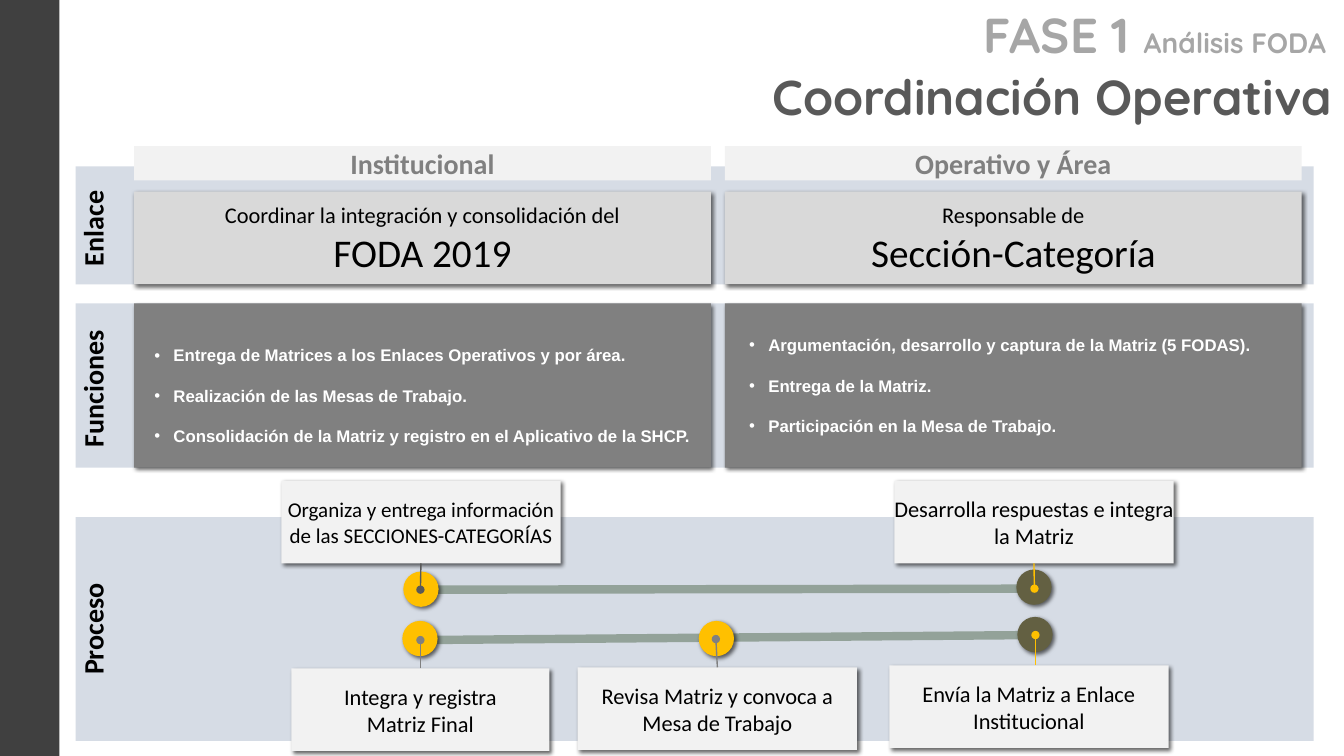
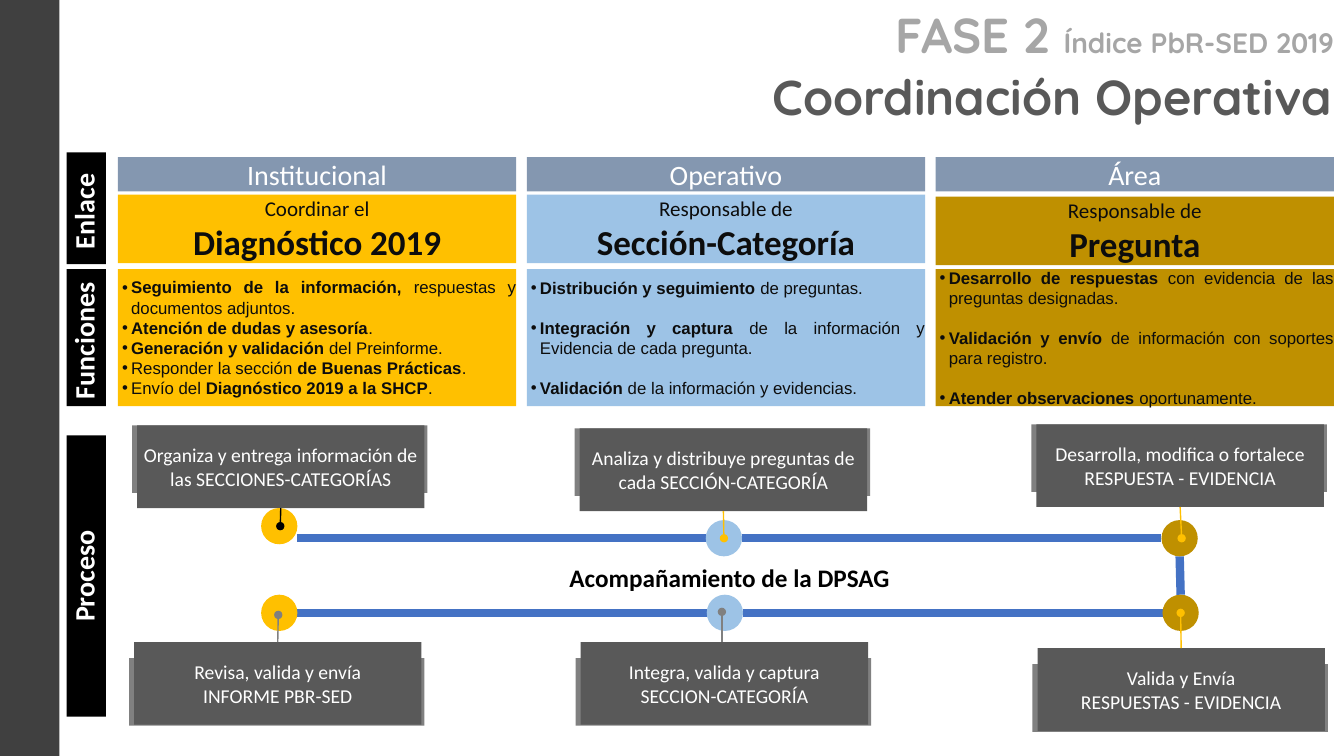
import pptx
import pptx.util
import pptx.dml.color
import pptx.enum.shapes
import pptx.enum.text
import pptx.oxml.ns
from lxml import etree

Inches, Pt = pptx.util.Inches, pptx.util.Pt
qn = pptx.oxml.ns.qn
Align = pptx.enum.text.PP_ALIGN
Anchor = pptx.enum.text.MSO_ANCHOR
Kind = pptx.enum.shapes.MSO_SHAPE

BLACK, WHITE, INK = "000000", "FFFFFF", "0D0D0D"
GOLD, OLIVE, OCHRE, SKY = "FFC000", "636042", "BF9000", "9DC3E6"
DARK, GREY, PALE, BAND = "595959", "808080", "F2F2F2", "D6DCE5"
SAGE, BLUE = "93A299", "4472C4"
TITLE = "Coordinación Operativa"

# Slide 1: columns, side bands (text, top, height), process
COLS1 = [
    dict(left=1.33, head="Institucional",
         role=["Coordinar la integración y consolidación del", "FODA 2019"],
         tasks=["*Entrega de Matrices a los Enlaces Operativos y por área.*",
                "*Realización de las Mesas de Trabajo.*",
                "*Consolidación de la Matriz y registro en el Aplicativo de la SHCP.*"],
         ins=(0, 0, 0, 0)),
    dict(left=7.19, head="Operativo y Área",
         role=["Responsable de", "Sección-Categoría"],
         tasks=["*Argumentación, desarrollo y captura de la Matriz (5 FODAS).*",
                "*Entrega de la Matriz.*",
                "*Participación en la Mesa de Trabajo.*"],
         ins=(0.04, 0, 0, 0.2)),
]
BANDS1 = [("Enlace ", 1.65, 1.17), ("Funciones ", 3.01, 1.63), ("Proceso", 5.13, 2.22)]
LINKS1 = [(4.23, 5.85, 10.27, 5.84), (4.14, 6.35, 10.27, 6.3)]
DOTS1 = [(4, 5.67, GOLD), (10.08, 5.65, OLIVE), (3.99, 6.16, GOLD),
         (6.93, 6.16, GOLD), (10.09, 6.12, OLIVE)]
# Cards: left, top, width, paragraphs, text size, pin colour, pin end
CARDS1 = [
    (2.79, 4.77, 2.77, ["Organiza y entrega información de las SECCIONES-CATEGORÍAS"],
     15, DARK, (4.17, 5.85)),
    (8.87, 4.77, 2.77, ["Desarrolla respuestas e integra la Matriz"], 16, GOLD, (10.26, 5.84)),
    (8.82, 6.6, 2.77, ["Envía la Matriz a Enlace Institucional"], 16, GOLD, (10.27, 6.3)),
    (5.73, 6.62, 2.77, ["Revisa Matriz y convoca a Mesa de Trabajo"], 16, GREY, (7.1, 6.34)),
    (2.89, 6.63, 2.56, ["Integra y registra", "Matriz Final"], 16, GREY, (4.17, 6.35)),
]

# Slide 2: the same parts
COLS2 = [
    dict(head="Institucional", fill=GOLD, top=1.93, gap=0,
         role=["Coordinar el", "Diagnóstico 2019"],
         tasks=["*Seguimiento de la información, *respuestas y documentos adjuntos.",
                "*Atención de dudas y asesoría*.",
                "*Generación y validación *del Preinforme.",
                "Responder la sección *de Buenas Prácticas*.",
                "Envío del *Diagnóstico 2019 a la SHCP*."]),
    dict(head="Operativo", fill=SKY, top=1.93, gap=14,
         role=["Responsable de", "Sección-Categoría"],
         tasks=["*Distribución y seguimiento *de preguntas.",
                "*Integración y captura *de la información y Evidencia de cada pregunta.",
                "*Validación* de la información y evidencias."]),
    dict(head="Área", fill=OCHRE, top=1.95, gap=14,
         role=["Responsable de", "Pregunta"],
         tasks=["*Desarrollo de respuestas *con evidencia de las preguntas designadas.",
                "*Validación y envío *de información con soportes para registro.",
                "*Atender observaciones *oportunamente."]),
]
BANDS2 = [("Enlace ", 1.51, 1.11), ("Funciones ", 2.67, 1.36), ("Proceso", 4.32, 2.79)]
LINKS2 = [(2.95, 5.34, 7, 5.34), (7.36, 5.34, 11.52, 5.34), (11.71, 5.9, 11.7, 5.52),
          (7.37, 6.08, 11.55, 6.08), (2.95, 6.08, 7.01, 6.08)]
DOTS2 = [(2.59, 5.04, GOLD), (7, 5.16, SKY), (11.52, 5.16, OCHRE),
         (2.59, 5.9, GOLD), (7.01, 5.9, SKY), (11.53, 5.9, OCHRE)]
CARDS2 = [
    (1.36, 4.22, 2.85, ["Organiza y entrega información de las SECCIONES-CATEGORÍAS"],
     14, BLACK, (2.78, 5.22)),
    (5.75, 4.25, 2.85, ["Analiza y distribuye preguntas de cada SECCIÓN-CATEGORÍA"],
     14, GOLD, (7.18, 5.34)),
    (10.28, 4.21, 2.85, ["Desarrolla, modifica o fortalece", "RESPUESTA - EVIDENCIA"],
     14, GOLD, (11.72, 5.34)),
    (1.33, 6.37, 2.85, ["Revisa, valida y envía", "INFORME PBR-SED"],
     14, GREY, (2.76, 6.1)),
    (5.76, 6.37, 2.85, ["Integra, valida y captura", "SECCION-CATEGORÍA"],
     14, GREY, (7.16, 6.07)),
    (10.29, 6.43, 2.85, ["Valida y Envía", "RESPUESTAS - EVIDENCIA"],
     14, GOLD, (11.71, 6.08)),
]
CARD_H = 0.82


def rgb(code):
    return pptx.dml.color.RGBColor.from_string(code)


def style(run, size, color, font="Calibri", bold=False):
    run.font.size, run.font.name, run.font.bold = Pt(size), font, bold
    run.font.color.rgb = rgb(color)


def frame(shape, anchor=Anchor.TOP, ins=None):
    box = shape.text_frame
    box.word_wrap, box.vertical_anchor = True, anchor
    if ins is not None:
        (box.margin_left, box.margin_top,
         box.margin_right, box.margin_bottom) = [Inches(n) for n in ins]
    return box


def shade(shape):
    """Soft shadow down and to the right."""
    effects = shape.element.spPr.find(qn("a:effectLst"))
    outer = etree.SubElement(effects, qn("a:outerShdw"), blurRad=str(Pt(3)),
                             dist=str(Pt(2)), dir="2700000", algn="tl", rotWithShape="0")
    tint = etree.SubElement(outer, qn("a:srgbClr"), val=BLACK)
    etree.SubElement(tint, qn("a:alpha"), val="60000")


def block(slide, x, y, w, h, fill, kind=Kind.RECTANGLE, shadow=False):
    shape = slide.shapes.add_shape(kind, Inches(x), Inches(y), Inches(w), Inches(h))
    shape.fill.solid()
    shape.fill.fore_color.rgb = rgb(fill)
    shape.line.fill.background()
    shape.shadow.inherit = False
    if shadow:
        shade(shape)
    return shape


def label(shape, lines, sizes, color, bolds=(False, False), anchor=Anchor.TOP,
          ins=(0, 0, 0, 0)):
    """Centred text, with a size and a weight for each line."""
    box = frame(shape, anchor, ins)
    box.text = "\n".join(lines)
    for para, size, bold in zip(box.paragraphs, sizes, bolds):
        para.alignment = Align.CENTER
        style(para.runs[0], size, color, bold=bold)


def bullets(shape, items, color, margin, hang, ins, spacing=None, gap=0):
    """Justified bullets; text between asterisks is bold."""
    box = frame(shape, Anchor.MIDDLE, ins)
    for i, item in enumerate(items):
        para = box.add_paragraph() if i else box.paragraphs[0]
        props = para.element.get_or_add_pPr() if hasattr(para, "element") else para._p.get_or_add_pPr()
        props.set("marL", str(Inches(margin)))
        props.set("indent", str(-Inches(hang)))
        etree.SubElement(props, qn("a:buFont"), typeface="Arial")
        etree.SubElement(props, qn("a:buChar"), char="•")
        para.alignment = Align.JUSTIFY
        if spacing:
            para.line_spacing = spacing
        if i and gap:
            para.space_before = Pt(gap)
        for k, part in enumerate(item.split("*")):
            if part:
                run = para.add_run()
                run.text = part
                style(run, 12, color, "Arial", bold=k % 2 == 1)


def line(slide, x1, y1, x2, y2, color, width, oval=False):
    link = slide.shapes.add_connector(pptx.enum.shapes.MSO_CONNECTOR.STRAIGHT,
                                      *[Inches(n) for n in (x1, y1, x2, y2)])
    link.line.color.rgb = rgb(color)
    link.line.width = Pt(width)
    props = link.element.spPr
    if oval:
        etree.SubElement(props.find(qn("a:ln")), qn("a:tailEnd"), type="oval")
    etree.SubElement(props, qn("a:effectLst"))
    return link


def bands(slide, rows, x, w, fill, color):
    """Bands whose text reads upwards along the left edge."""
    for text, y, h in rows:
        band = block(slide, x + (w - h) / 2, y + (h - w) / 2, h, w, fill)
        band.rotation = 270
        label(band, [text], [20], color, [True])


def process(slide, links, dots, cards, color, fill, ink, dot, shadow=False, plate=False):
    for ends in links:
        line(slide, *ends, color, 6)
    pins = []
    for x, y, w, text, size, tint, end in cards:
        above = y < end[1]
        if plate:
            block(slide, x - 0.05, y if above else y + 0.16, 2.93, 0.67, GREY)
        card = block(slide, x, y, w, CARD_H, fill, shadow=shadow)
        label(card, text, [size] * 2, ink, anchor=Anchor.MIDDLE)
        pins.append((card, x + w / 2, y + CARD_H if above else y, above, tint, end))
    for x, y, tint in dots:
        block(slide, x, y, dot, dot, tint, Kind.OVAL, shadow)
    for card, mid, edge, above, tint, end in pins:
        pin = line(slide, end[0], edge, *end, tint, 1, oval=True)
        if abs(mid - end[0]) < 0.02:
            pin.begin_connect(card, 2 if above else 0)


def start(deck, phase, topic):
    """New slide with the title and the phase heading."""
    slide = deck.slides.add_slide(deck.slide_layouts[5])
    title = slide.shapes.title
    title.left, title.top, title.width, title.height = [
        Inches(n) for n in (3.85, 0.61, 9.47, 0.69)]
    box = frame(title)
    box.auto_size = pptx.enum.text.MSO_AUTO_SIZE.NONE
    box.text = TITLE
    box.paragraphs[0].alignment = Align.RIGHT
    style(box.paragraphs[0].runs[0], 35, DARK, "Quicksand", True)
    head = slide.shapes.add_textbox(Inches(3.86), 0, Inches(9.47), Inches(0.71))
    para = frame(head).paragraphs[0]
    para.alignment = Align.RIGHT
    for text, size in ((phase, 35), (topic, 20)):
        run = para.add_run()
        run.text = text
        style(run, size, "A6A6A6", "Quicksand", True)
    return slide


def first(deck):
    slide = start(deck, "FASE 1 ", "Análisis FODA ")
    bands(slide, BANDS1, 0.75, 12.28, BAND, BLACK)
    for col in COLS1:
        x, w = col["left"], 5.72
        label(block(slide, x, 1.45, w, 0.34, PALE), [col["head"]], [20], GREY, [True])
        label(block(slide, x, 1.9, w, 0.92, "D9D9D9", shadow=True), col["role"],
              [16, 28], BLACK, anchor=Anchor.MIDDLE, ins=None)
        bullets(block(slide, x, 3.01, w, 1.63, GREY, shadow=True), col["tasks"],
                WHITE, 0.39, 0.19, col["ins"], spacing=2.0)
    process(slide, LINKS1, DOTS1, CARDS1, SAGE, PALE, BLACK, 0.35, shadow=True)


def second(deck):
    slide = start(deck, "FASE 2 ", "Índice PbR-SED 2019")
    bands(slide, BANDS2, 0.66, 0.39, BLACK, WHITE)
    for i, col in enumerate(COLS2):
        x, w = 1.17 + 4.055 * i, 3.95
        label(block(slide, x, 1.56, w, 0.34, "8497B0"), [col["head"]], [20], WHITE)
        label(block(slide, x, col["top"], w, 0.68, col["fill"]), col["role"],
              [15, 25], INK, [False, True], Anchor.MIDDLE, None)
        bullets(block(slide, x, 2.67, w, 1.36, col["fill"]), col["tasks"],
                INK, 0.09, 0.09, (0.04, 0, 0, 0), gap=col["gap"])
    process(slide, LINKS2, DOTS2, CARDS2, BLUE, DARK, WHITE, 0.36, plate=True)
    note = slide.shapes.add_textbox(Inches(5.55), Inches(5.53), Inches(3.4), Inches(0.4))
    note.text_frame.word_wrap = False
    note.text_frame.text = "Acompañamiento de la DPSAG"
    style(note.text_frame.paragraphs[0].runs[0], 18, BLACK, bold=True)


def main():
    deck = pptx.Presentation()
    deck.slide_width, deck.slide_height = Inches(13.33), Inches(7.5)
    first(deck)
    second(deck)
    # The dark left bar belongs to the master
    bar = block(deck.slides[0], 0, 0, 0.59, 7.5, "404040")
    deck.slide_master.shapes.element.insert(2, bar.element)
    deck.save("out.pptx")


if __name__ == "__main__":
    main()
